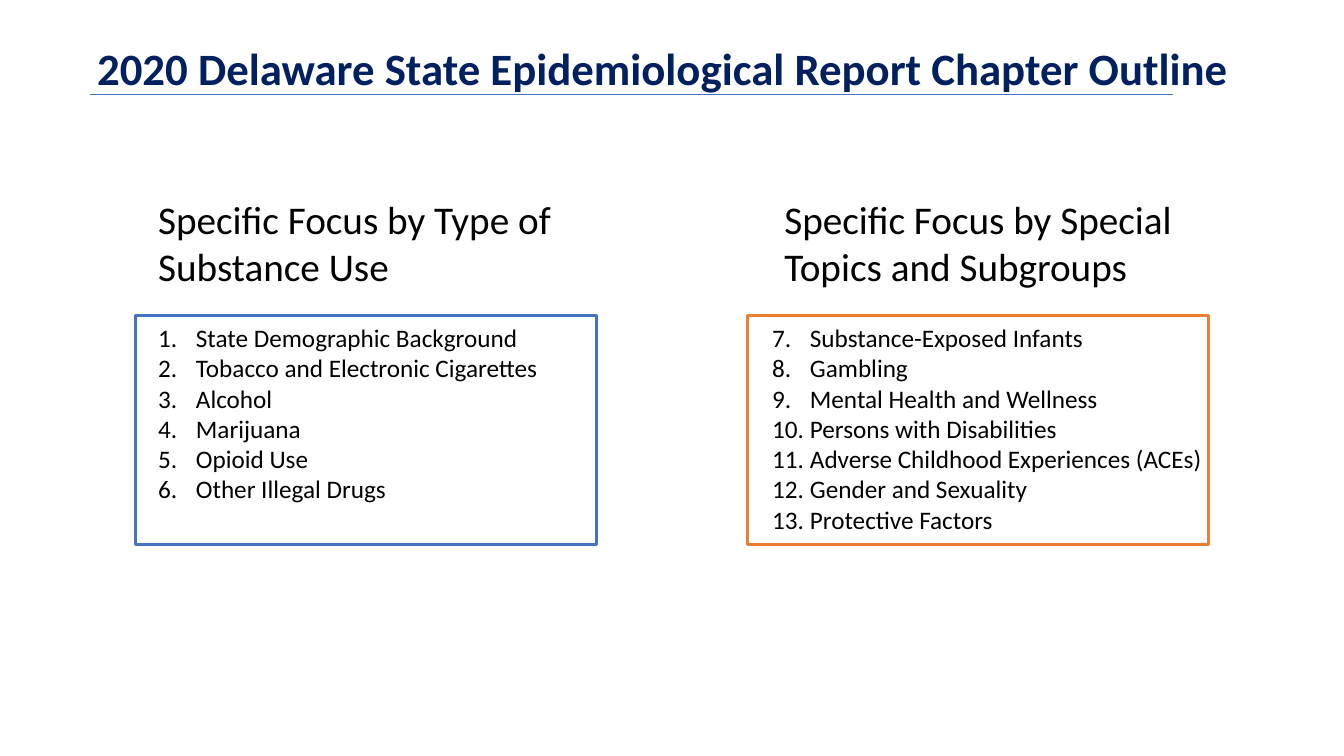
"""Build the chapter outline slide of the state epidemiological report."""
from lxml.etree import SubElement
from pptx import Presentation
from pptx.dml.color import RGBColor
from pptx.enum.shapes import MSO_CONNECTOR, MSO_SHAPE
from pptx.enum.text import MSO_ANCHOR, MSO_AUTO_SIZE, PP_ALIGN
from pptx.oxml.ns import qn
from pptx.util import Inches, Pt

FONT = "Calibri"
NAVY = RGBColor(0x00, 0x20, 0x60)
BLUE = RGBColor(0x44, 0x72, 0xC4)
ORANGE = RGBColor(0xED, 0x7D, 0x31)
BLACK = RGBColor(0x00, 0x00, 0x00)

TITLE = "2020 Delaware State Epidemiological Report Chapter Outline"
SUBSTANCE_CHAPTERS = [
    "State Demographic Background",
    "Tobacco and Electronic Cigarettes",
    "Alcohol",
    "Marijuana",
    "Opioid Use",
    "Other Illegal Drugs",
]
SPECIAL_CHAPTERS = [
    "Substance-Exposed Infants",
    "Gambling",
    "Mental Health and Wellness",
    "Persons with Disabilities",
    "Adverse Childhood Experiences (ACEs)",
    "Gender and Sexuality",
    "Protective Factors",
]


def add_run(paragraph, text, size, color, bold=False):
    """Append one formatted run to a paragraph."""
    run = paragraph.add_run()
    run.text = text
    run.font.name = FONT
    run.font.size = Pt(size)
    run.font.bold = bold
    run.font.color.rgb = color


def number_paragraph(paragraph, start):
    """Give a paragraph a hanging automatic number."""
    properties = paragraph._p.get_or_add_pPr()
    properties.set("marL", str(Inches(0.375)))
    properties.set("indent", str(-Inches(0.375)))
    SubElement(properties, qn("a:buFont"), typeface=FONT)
    SubElement(properties, qn("a:buAutoNum"), type="arabicPeriod", startAt=str(start))


def add_text_frame(slide, left, top, width, height):
    """Add a wrapping text box and return its text frame."""
    frame = slide.shapes.add_textbox(
        Inches(left), Inches(top), Inches(width), Inches(height)
    ).text_frame
    frame.word_wrap = True
    return frame


def add_title(slide, left, top, width, height):
    """Place the slide title and the rule beneath it."""
    title = slide.shapes.title
    title.left, title.top = Inches(left), Inches(top)
    title.width, title.height = Inches(width), Inches(height)
    frame = title.text_frame
    frame.word_wrap = True
    frame.auto_size = MSO_AUTO_SIZE.NONE
    frame.vertical_anchor = MSO_ANCHOR.TOP
    heading = frame.paragraphs[0]
    heading.alignment = PP_ALIGN.CENTER
    add_run(heading, TITLE, 32, NAVY, bold=True)

    rule_left, rule_top = Inches(left + 0.14), Inches(top + 0.59)
    rule = slide.shapes.add_connector(
        MSO_CONNECTOR.STRAIGHT, rule_left, rule_top,
        rule_left + Inches(10.74), rule_top,
    )
    rule.line.color.rgb = BLUE
    rule.line.width = Pt(0.5)
    SubElement(rule._element.spPr, qn("a:effectLst"))


def add_chapter_group(slide, left, top, width, height, color, heading,
                      chapters, start, heading_inset, list_inset):
    """Place a framed numbered chapter list with its heading above."""
    border = slide.shapes.add_shape(
        MSO_SHAPE.RECTANGLE, Inches(left), Inches(top), Inches(width), Inches(height)
    )
    border.shadow.inherit = False
    border.fill.background()
    border.line.color.rgb = color
    border.line.width = Pt(2.25)

    heading_frame = add_text_frame(slide, left + heading_inset, top - 1.24, 4.68, 1.04)
    add_run(heading_frame.paragraphs[0], heading, 28, BLACK)

    list_frame = add_text_frame(slide, left + list_inset, top + 0.02, 4.7, 2.52)
    for index, chapter in enumerate(chapters):
        paragraph = list_frame.paragraphs[0] if index == 0 else list_frame.add_paragraph()
        number_paragraph(paragraph, start)
        add_run(paragraph, chapter, 18, BLACK)


def main():
    """Build and save the presentation."""
    presentation = Presentation()
    presentation.slide_width = Inches(13.33)
    presentation.slide_height = Inches(7.5)
    slide = presentation.slides.add_slide(presentation.slide_layouts[5])

    add_title(slide, 0.75, 0.35, 11.65, 0.64)
    add_chapter_group(
        slide, 1.34, 3.13, 4.58, 2.27, BLUE,
        "Specific Focus by Type of Substance Use",
        SUBSTANCE_CHAPTERS, start=1, heading_inset=0.13, list_inset=0.13,
    )
    add_chapter_group(
        slide, 7.41, 3.13, 4.58, 2.27, ORANGE,
        "Specific Focus by Special Topics and Subgroups",
        SPECIAL_CHAPTERS, start=len(SUBSTANCE_CHAPTERS) + 1,
        heading_inset=0.27, list_inset=0.15,
    )
    presentation.save("out.pptx")


if __name__ == "__main__":
    main()
